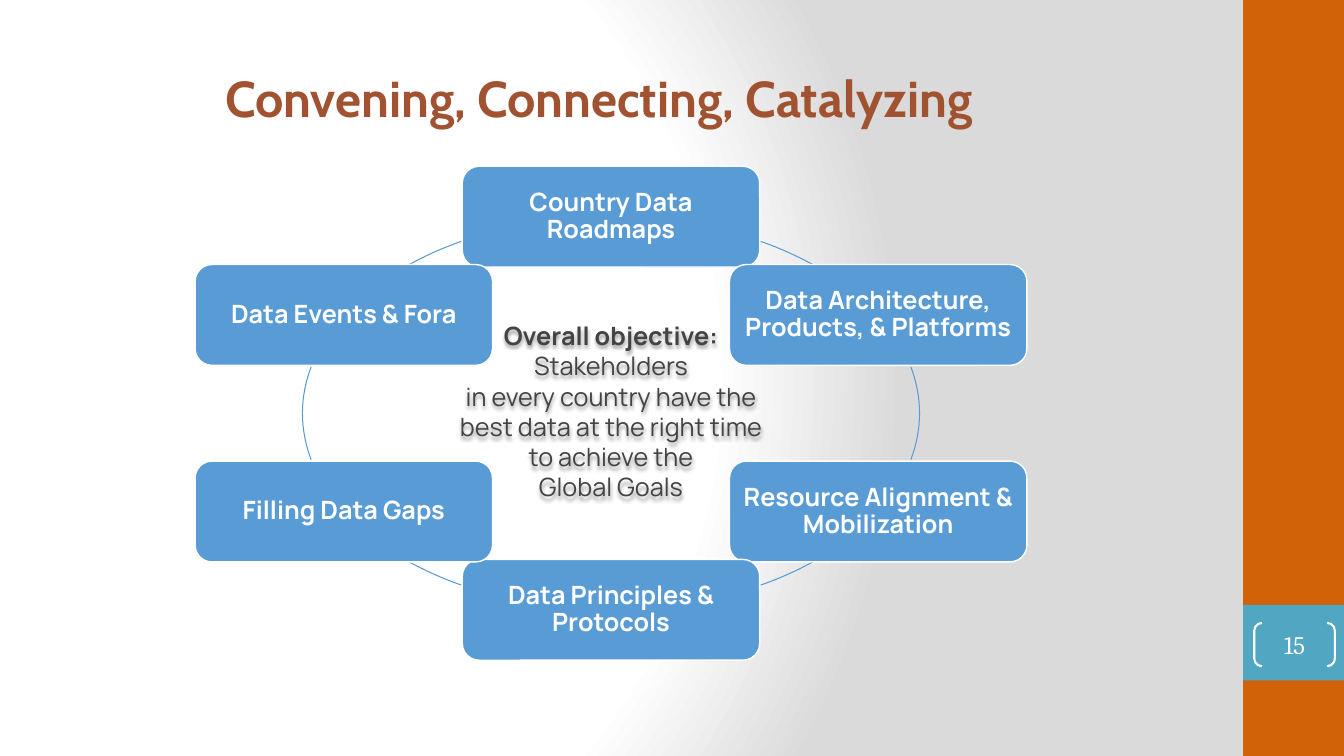
import math

from lxml import etree
from pptx import Presentation
from pptx.dml.color import RGBColor
from pptx.enum.shapes import MSO_SHAPE
from pptx.enum.text import MSO_ANCHOR, PP_ALIGN
from pptx.oxml.ns import qn
from pptx.util import Inches, Pt

RECT = MSO_SHAPE.RECTANGLE
ROUNDED = MSO_SHAPE.ROUNDED_RECTANGLE
ARC = MSO_SHAPE.ARC
BRACKETS = MSO_SHAPE.DOUBLE_BRACKET
MIDDLE, BOTTOM = MSO_ANCHOR.MIDDLE, MSO_ANCHOR.BOTTOM
CENTER = PP_ALIGN.CENTER

WHITE, BLUE, ORANGE, TEAL = "FFFFFF", "599BD5", "D16207", "51A6C2"
RING_X, RING_Y = 6.06, 4.1
RADIUS_X, RADIUS_Y = 3.06, 1.95
BOX_WIDTH, BOX_HEIGHT = 2.95, 1

ACTIVITIES = [
    "Country Data Roadmaps",
    "Data Architecture, Products, & Platforms",
    "Resource Alignment & Mobilization",
    "Data Principles & Protocols",
    "Filling Data Gaps",
    "Data Events & Fora",
]
ARC_SPANS = [(-49, -36.3), (-8.8, 8.8), (36.3, 49),
             (131, 143.7), (171.2, 188.8), (216.3, 229)]
OBJECTIVE = [
    "Overall objective:",
    "Stakeholders",
    "in every country have the",
    "best data at the right time",
    "to achieve the",
    "Global Goals",
]


def rgb(value):
    """Turn a hex string into a colour."""
    return RGBColor.from_string(value)


def add_child(parent, tag, **attributes):
    """Append a DrawingML element and return it."""
    child = etree.SubElement(parent, qn(tag))
    for name, value in attributes.items():
        child.set(name, str(value))
    return child


def paint_background(slide):
    """Fill the slide with a circular white to grey gradient."""
    slide.background.fill.gradient()
    gradient = next(slide.element.iter(qn("a:gradFill")))
    for child in list(gradient):
        gradient.remove(child)
    stops = add_child(gradient, "a:gsLst")
    for percent, color in [(0, WHITE), (75, WHITE), (100, "DADADA")]:
        stop = add_child(stops, "a:gs", pos=percent * 1000)
        add_child(stop, "a:srgbClr", val=color)
    circle = add_child(gradient, "a:path", path="circle")
    add_child(circle, "a:fillToRect", l=20000, t=50000, r=100000, b=50000)


def add_form(slide, kind, left, top, width, height, fill=None, line=None, weight=1):
    """Add a preset shape without shadow."""
    form = slide.shapes.add_shape(
        kind, Inches(left), Inches(top), Inches(width), Inches(height))
    form.shadow.inherit = False
    if fill:
        form.fill.solid()
        form.fill.fore_color.rgb = rgb(fill)
    else:
        form.fill.background()
    if line:
        form.line.color.rgb = rgb(line)
        form.line.width = Pt(weight)
    else:
        form.line.fill.background()
    return form


def write(holder, lines, size, font, color, bold=False, spacing=1.0,
          anchor=MIDDLE, inset=(0, 0)):
    """Put centred lines of text in a shape."""
    frame = holder.text_frame
    frame.word_wrap = True
    frame.vertical_anchor = anchor
    frame.margin_left = frame.margin_right = Inches(inset[0])
    frame.margin_top = frame.margin_bottom = Inches(inset[1])
    frame.text = "\n".join(lines)
    for paragraph in frame.paragraphs:
        paragraph.alignment = CENTER
        paragraph.line_spacing = spacing
        for run in paragraph.runs:
            run.font.size = Pt(size)
            run.font.name = font
            run.font.bold = bold
            run.font.color.rgb = rgb(color)


def add_sidebar(slide):
    """Draw the side band with the slide number."""
    add_form(slide, RECT, 12.33, 0, 1, 7.5, fill=ORANGE)
    add_form(slide, RECT, 12.33, 6, 1, 0.75, fill=TEAL)
    number = add_form(slide, BRACKETS, 12.44, 6.18, 0.8, 0.43, line=WHITE, weight=1.5)
    number.adjustments[0] = 0.179
    write(number, ["15"], 18, "Cambria", WHITE)


def add_ring_arc(slide, start, end):
    """Draw one part of the ring, between two angles in degrees."""
    arc = add_form(slide, ARC, RING_X - RADIUS_X, RING_Y - RADIUS_Y,
                   2 * RADIUS_X, 2 * RADIUS_Y, line=BLUE, weight=0.75)
    for index, angle in enumerate((start, end)):
        arc.adjustments[index] = angle % 360 * 0.6


def add_activity(slide, position, activity):
    """Place one activity box on the ring, clockwise from the top."""
    angle = math.radians(position * 360 / len(ACTIVITIES))
    center_x = RING_X + RADIUS_X * math.sin(angle)
    center_y = RING_Y - RADIUS_Y * math.cos(angle)
    box = add_form(slide, ROUNDED, center_x - BOX_WIDTH / 2, center_y - BOX_HEIGHT / 2,
                   BOX_WIDTH, BOX_HEIGHT, fill=BLUE, line=WHITE)
    write(box, [activity], 18, "Manrope", WHITE, bold=True, spacing=0.9,
          inset=(0.08, 0.06))


def add_objective(slide):
    """Write the shadowed objective in the middle of the ring."""
    objective = add_form(slide, ROUNDED, 2.41, 2.86, 7.3, 2.44)
    write(objective, OBJECTIVE, 18, "Manrope", "434343", inset=(0.04, 0.04))
    objective.text_frame.paragraphs[0].runs[0].font.bold = True
    effects = next(objective.element.iter(qn("a:effectLst")))
    shadow = add_child(effects, "a:outerShdw", blurRad=Pt(3), dist=Pt(2),
                       dir=5400000, rotWithShape=0)
    shade = add_child(shadow, "a:srgbClr", val="000000")
    add_child(shade, "a:alpha", val=40000)


def add_title(slide):
    """Write the slide title."""
    title = slide.shapes.add_textbox(Inches(1.36), Inches(0.68), Inches(9.16), Inches(0.64))
    write(title, ["Convening, Connecting, Catalyzing"], 36, "Cabin", "A15231",
          bold=True, spacing=0.9, anchor=BOTTOM, inset=(0.1, 0.05))


def main():
    """Build and save the slide."""
    deck = Presentation()
    deck.slide_width, deck.slide_height = Inches(13.33), Inches(7.5)
    slide = deck.slides.add_slide(deck.slide_layouts[6])
    paint_background(slide)
    add_sidebar(slide)
    for start, end in ARC_SPANS:
        add_ring_arc(slide, start, end)
    for position, activity in enumerate(ACTIVITIES):
        add_activity(slide, position, activity)
    add_objective(slide)
    add_title(slide)
    deck.save("out.pptx")


if __name__ == "__main__":
    main()
